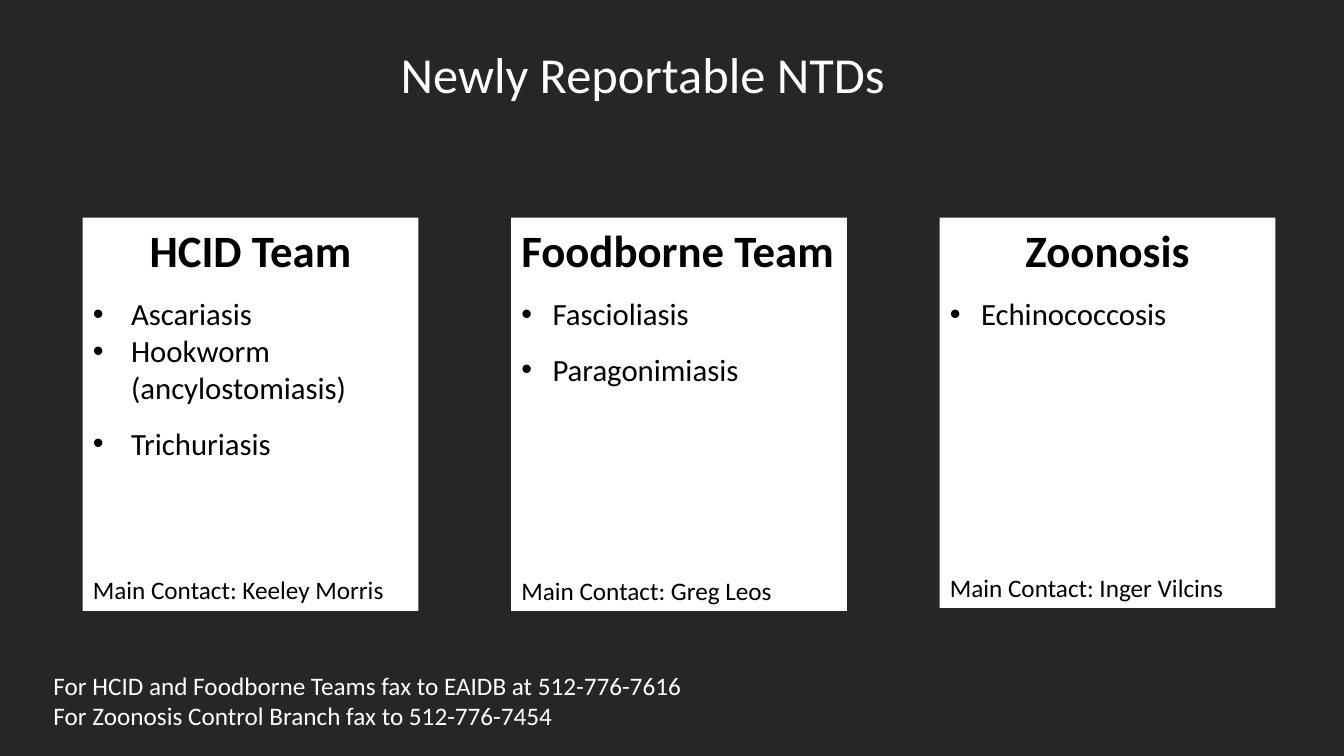
from dataclasses import dataclass

from lxml.etree import SubElement
from pptx import Presentation
from pptx.dml.color import RGBColor
from pptx.enum.text import MSO_ANCHOR, MSO_AUTO_SIZE, PP_ALIGN
from pptx.oxml.ns import qn
from pptx.util import Emu, Pt

PX = 9144  # EMU in one px, at 100 px to the inch


@dataclass(frozen=True)
class Theme:
    font: str = "Calibri"
    dark: RGBColor = RGBColor(0x26, 0x26, 0x26)
    white: RGBColor = RGBColor(0xFF, 0xFF, 0xFF)
    black: RGBColor = RGBColor(0, 0, 0)
    title: int = 36
    heading: int = 32
    item: int = 22
    small: int = 18


@dataclass(frozen=True)
class Line:
    text: str
    size: int
    color: RGBColor
    bold: bool = False
    align: PP_ALIGN = PP_ALIGN.LEFT
    spacing: float = 1.0
    before: int = 0  # points
    hanging: int = 0  # px; a bullet is drawn when it is set


@dataclass(frozen=True)
class Card:
    heading: str
    align: PP_ALIGN
    items: tuple[tuple[str, float], ...]  # wording and line spacing
    hanging: int
    contact: str
    gap: int  # points above the contact
    height: int


THEME = Theme()
CARD_LEFT, CARD_TOP, CARD_WIDTH, CARD_STEP = 82, 216, 333, 425
CARDS = (
    Card("HCID Team", PP_ALIGN.CENTER,
         (("Ascariasis", 1.5), ("Hookworm (ancylostomiasis)", 1.0), ("Trichuriasis", 1.5)),
         38, "Keeley Morris", 81, 390),
    Card("Foodborne Team", PP_ALIGN.LEFT,
         (("Fascioliasis", 1.5), ("Paragonimiasis", 1.5)),
         31, "Greg Leos", 134, 390),
    Card("Zoonosis", PP_ALIGN.CENTER,
         (("Echinococcosis", 1.5),),
         31, "Inger Vilcins", 172, 387),
)
FAX_LINES = (
    "For HCID and Foodborne Teams fax to EAIDB at 512-776-7616",
    "For Zoonosis Control Branch fax to 512-776-7454",
)


def set_all(target: object, values: dict[str, object]) -> None:
    for name, value in values.items():
        setattr(target, name, value)


def place(box, left: int, top: int, width: int, height: int) -> None:
    set_all(box, {"left": Emu(left * PX), "top": Emu(top * PX),
                  "width": Emu(width * PX), "height": Emu(height * PX)})


def write(box, lines: list[Line]) -> None:
    frame = box.text_frame
    set_all(frame, {"word_wrap": True, "auto_size": MSO_AUTO_SIZE.NONE,
                    "vertical_anchor": MSO_ANCHOR.TOP})
    for number, line in enumerate(lines):
        para = frame.add_paragraph() if number else frame.paragraphs[0]
        set_all(para, {"alignment": line.align, "line_spacing": line.spacing,
                       "space_before": Pt(line.before), "space_after": Pt(0)})
        # Bullet and hanging indent
        properties = para._p.get_or_add_pPr()
        properties.set("marL", str(line.hanging * PX))
        properties.set("indent", str(-line.hanging * PX))
        if line.hanging:
            SubElement(properties, qn("a:buChar")).set("char", "•")
        else:
            SubElement(properties, qn("a:buNone"))
        span = para.add_run()
        span.text = line.text
        set_all(span.font, {"name": THEME.font, "size": Pt(line.size), "bold": line.bold})
        span.font.color.rgb = line.color


def draw_card(box, card: Card, column: int) -> None:
    place(box, CARD_LEFT + column * CARD_STEP, CARD_TOP, CARD_WIDTH, card.height)
    box.fill.solid()
    box.fill.fore_color.rgb = THEME.white
    write(box, [
        Line(card.heading, THEME.heading, THEME.black, bold=True, align=card.align),
        *(Line(text, THEME.item, THEME.black, spacing=spacing, hanging=card.hanging)
          for text, spacing in card.items),
        Line(f"Main Contact: {card.contact}", THEME.small, THEME.black, before=card.gap),
    ])


def main() -> None:
    deck = Presentation()
    set_all(deck, {"slide_width": Emu(1333 * PX), "slide_height": Emu(750 * PX)})
    # The Comparison layout holds a title and four bodies
    page = deck.slides.add_slide(deck.slide_layouts.get_by_name("Comparison"))
    page.background.fill.solid()
    page.background.fill.fore_color.rgb = THEME.dark
    title, *card_boxes, fax_box = page.placeholders

    # Title
    place(title, 82, 38, 1111, 71)
    write(title, [Line("Newly Reportable NTDs", THEME.title, THEME.white,
                       align=PP_ALIGN.CENTER)])

    # Team cards
    for column, (box, card) in enumerate(zip(card_boxes, CARDS)):
        draw_card(box, card, column)

    # Fax numbers
    place(fax_box, 43, 660, 1230, 71)
    write(fax_box, [Line(text, THEME.small, THEME.white) for text in FAX_LINES])

    deck.save("out.pptx")


if __name__ == "__main__":
    main()
